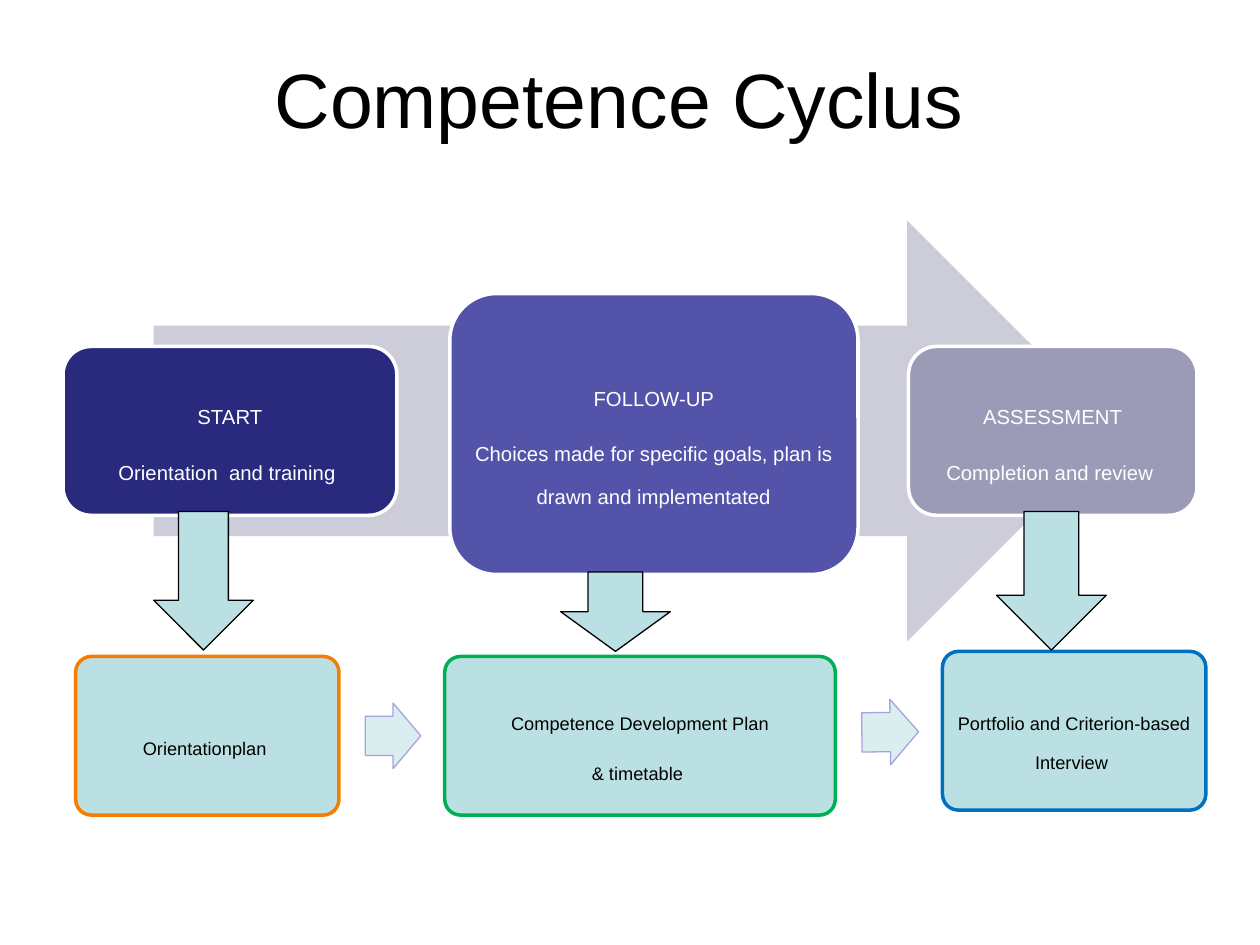
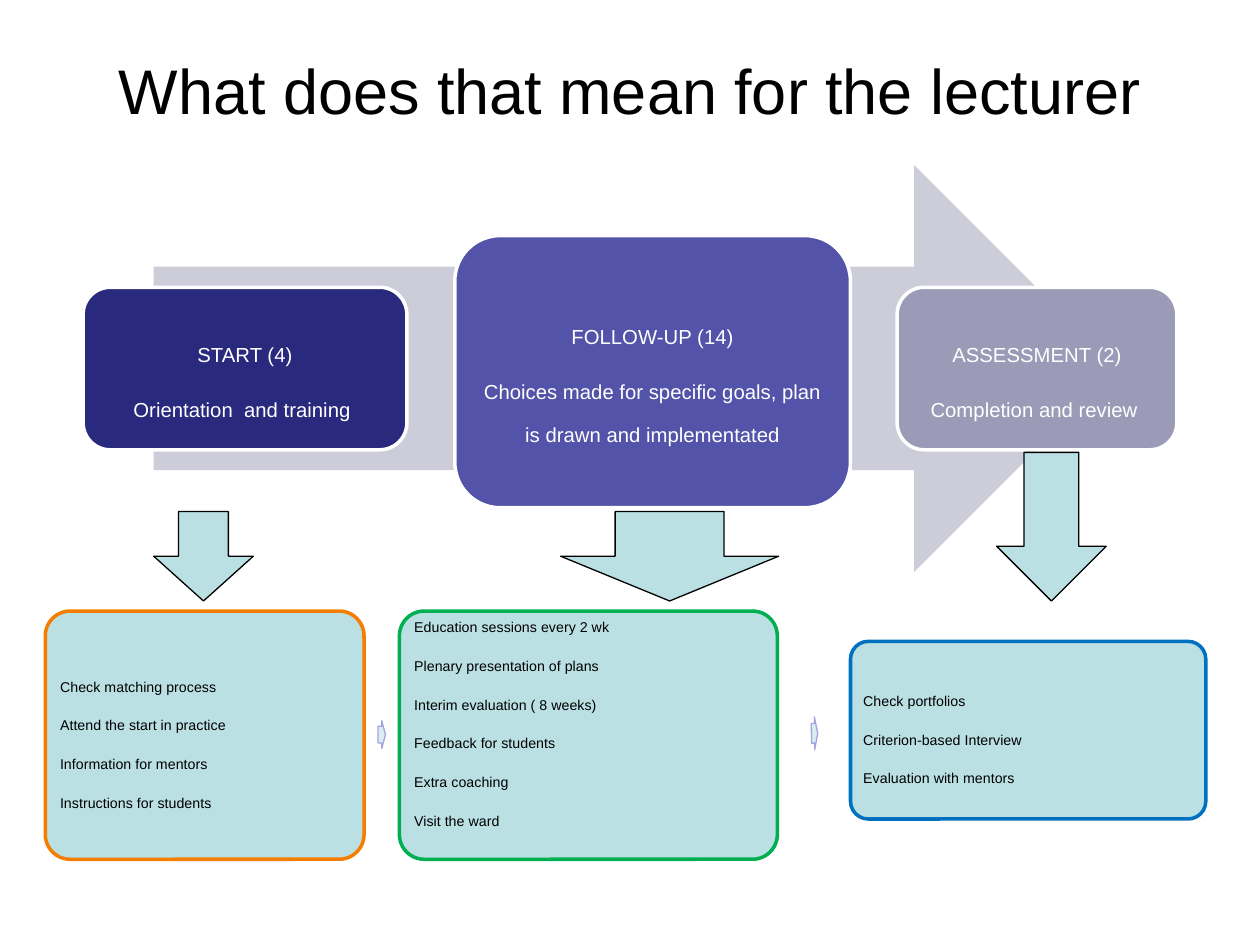
from dataclasses import dataclass
from typing import Optional

import pptx
import pptx.dml.color
import pptx.enum.shapes
import pptx.enum.text
import pptx.oxml.xmlchemy
import pptx.util
from pptx.util import Inches

SHAPE = pptx.enum.shapes.MSO_SHAPE
ALIGN = pptx.enum.text.PP_ALIGN
ANCHOR = pptx.enum.text.MSO_ANCHOR


@dataclass(frozen=True)
class Theme:
    font: str = "Arial"
    black: str = "000000"
    white: str = "FFFFFF"
    band: str = "CDCDDA"
    phases: tuple = ("29297D", "5353A9", "9B9BB8")
    product: str = "BBE0E3"
    outlines: tuple = ("F57E00", "00B050", "0070C0")
    link: str = "DAEDEF"
    link_line: str = "A3A3E0"
    phase_size: int = 20
    thick: float = 2
    thin: float = 0.75


THEME = Theme()


@dataclass(frozen=True)
class Place:
    left: float
    top: float
    width: float
    height: float
    rotation: float = 0


@dataclass(frozen=True)
class TextStyle:
    size: float
    color: str
    inset: float
    align: ALIGN = ALIGN.CENTER


@dataclass(frozen=True)
class Box:
    place: Place
    lines: tuple
    extra_bottom: float = 0


@dataclass(frozen=True)
class CycleSlide:
    title: str
    title_size: int
    band: Place
    phases: tuple
    products: tuple
    product_style: TextStyle
    links: tuple
    down_arrows: tuple


PHASE_STYLE = TextStyle(THEME.phase_size, THEME.white, 0.08)
FOLLOW_UP = "Choices made for specific goals, plan is drawn and implementated"

SLIDES = (
    CycleSlide(
        title="Competence Cyclus ",
        title_size=44,
        band=Place(1.22, 1.75, 7.65, 3.34),
        phases=(
            Box(Place(0.5, 2.75, 2.65, 1.34), ("START", "Orientation  and training ")),
            Box(Place(3.57, 2.33, 3.24, 2.23), ("FOLLOW-UP", FOLLOW_UP)),
            Box(Place(7.21, 2.75, 2.29, 1.34), ("ASSESSMENT", "Completion and review ")),
        ),
        products=(
            Box(Place(0.6, 5.21, 2.09, 1.26), ("Orientationplan ",)),
            Box(Place(3.53, 5.21, 3.1, 1.26), ("Competence Development Plan", "& timetable ")),
            Box(Place(7.48, 5.17, 2.09, 1.26), ("Portfolio and Criterion-based Interview ",)),
        ),
        product_style=TextStyle(18, THEME.black, 0.07),
        links=(Place(2.9, 5.58, 0.44, 0.52), Place(6.84, 5.55, 0.45, 0.52, 359.3)),
        down_arrows=(
            Place(1.22, 4.06, 0.79, 1.1),
            Place(4.45, 4.54, 0.87, 0.63),
            Place(7.91, 4.06, 0.87, 1.1),
        ),
    ),
    CycleSlide(
        title="What does that mean for the lecturer",
        title_size=36,
        band=Place(1.22, 1.31, 7.65, 3.23),
        phases=(
            Box(Place(0.66, 2.28, 2.57, 1.29), ("START (4)", "Orientation  and training ")),
            Box(Place(3.61, 1.87, 3.14, 2.16), ("FOLLOW-UP (14)", FOLLOW_UP)),
            Box(Place(7.12, 2.28, 2.22, 1.29), ("ASSESSMENT (2)", "Completion and review ")),
        ),
        products=(
            Box(Place(0.36, 4.85, 2.53, 1.97), (
                "Check matching process",
                "Attend the start in practice",
                "Information for mentors",
                "Instructions for students",
            )),
            Box(Place(3.17, 4.85, 3, 1.97), (
                "Education sessions every 2 wk",
                "Plenary presentation of plans",
                "Interim evaluation ( 8 weeks)",
                "Feedback for students",
                "Extra coaching",
                "Visit the ward",
            ), extra_bottom=0.33),
            Box(Place(6.75, 5.09, 2.82, 1.41), (
                "Check portfolios",
                "Criterion-based Interview",
                "Evaluation with mentors",
            )),
        ),
        product_style=TextStyle(14, THEME.black, 0.06, ALIGN.LEFT),
        links=(Place(3, 5.72, 0.06, 0.22), Place(6.44, 5.69, 0.05, 0.26, 359.4)),
        down_arrows=(
            Place(1.22, 4.06, 0.79, 0.71),
            Place(4.45, 4.06, 1.73, 0.71),
            Place(7.91, 3.59, 0.87, 1.18),
        ),
    ),
)


def rgb(color: str) -> pptx.dml.color.RGBColor:
    return pptx.dml.color.RGBColor.from_string(color)


def apply(target, formats: dict) -> None:
    for name, value in formats.items():
        setattr(target, name, value)


def set_font(font, size: float, color: str) -> None:
    apply(font, {"name": THEME.font, "size": pptx.util.Pt(size)})
    font.color.rgb = rgb(color)


def add_shape(s, kind: SHAPE, place: Place, fill: str, line: Optional[str] = None,
              line_width: float = THEME.thin, adjustments: tuple = ()):
    sp = s.shapes.add_shape(kind, Inches(place.left), Inches(place.top),
                            Inches(place.width), Inches(place.height))
    sp.shadow.inherit = False
    sp.rotation = place.rotation
    for i, value in enumerate(adjustments):
        sp.adjustments[i] = value
    sp.fill.solid()
    sp.fill.fore_color.rgb = rgb(fill)
    if line:
        sp.line.color.rgb = rgb(line)
        sp.line.width = pptx.util.Pt(line_width)
    else:
        sp.line.fill.background()
    return sp


def set_space_after(p, percent: int) -> None:
    spacing = pptx.oxml.xmlchemy.OxmlElement("a:spcAft")
    share = pptx.oxml.xmlchemy.OxmlElement("a:spcPct")
    share.set("val", str(percent * 1000))
    spacing.append(share)
    p._p.get_or_add_pPr().append(spacing)


def write_lines(sp, box: Box, style: TextStyle) -> None:
    tf = sp.text_frame
    inset = Inches(style.inset)
    apply(tf, {
        "word_wrap": True,
        "vertical_anchor": ANCHOR.MIDDLE,
        "margin_left": inset,
        "margin_right": inset,
        "margin_top": inset,
        "margin_bottom": inset + Inches(box.extra_bottom),
    })
    for i, line in enumerate(box.lines):
        p = tf.add_paragraph() if i else tf.paragraphs[0]
        apply(p, {"alignment": style.align, "line_spacing": 0.9})
        set_space_after(p, 35)
        r = p.add_run()
        r.text = line
        set_font(r.font, style.size, style.color)
        r._r.get_or_add_rPr().set("baseline", "-25000")


def write_title(s, text: str, size: int) -> None:
    sp = s.shapes.title
    apply(sp, {"left": Inches(0.5), "top": Inches(0.3),
               "width": Inches(9), "height": Inches(1.25)})
    tf = sp.text_frame
    apply(tf, {"word_wrap": True, "vertical_anchor": ANCHOR.TOP,
               "margin_top": Inches(0.11),
               "auto_size": pptx.enum.text.MSO_AUTO_SIZE.NONE})
    p = tf.paragraphs[0]
    p.alignment = ALIGN.CENTER
    r = p.add_run()
    r.text = text
    set_font(r.font, size, THEME.black)


def build_slide(prs, cycle: CycleSlide) -> None:
    s = prs.slides.add_slide(prs.slide_layouts[5])
    write_title(s, cycle.title, cycle.title_size)
    add_shape(s, SHAPE.RIGHT_ARROW, cycle.band, THEME.band)
    for box, fill in zip(cycle.phases, THEME.phases):
        sp = add_shape(s, SHAPE.ROUNDED_RECTANGLE, box.place, fill, THEME.white, THEME.thick)
        write_lines(sp, box, PHASE_STYLE)
    for box, outline in zip(cycle.products, THEME.outlines):
        sp = add_shape(s, SHAPE.ROUNDED_RECTANGLE, box.place, THEME.product,
                       outline, THEME.thick, (0.1,))
        write_lines(sp, box, cycle.product_style)
    for place in cycle.links:
        add_shape(s, SHAPE.RIGHT_ARROW, place, THEME.link, THEME.link_line,
                  adjustments=(0.6, 0.5))
    for place in cycle.down_arrows:
        add_shape(s, SHAPE.DOWN_ARROW, place, THEME.product, THEME.black,
                  adjustments=(0.5, 0.5))


def main() -> None:
    prs = pptx.Presentation()
    apply(prs, {"slide_width": Inches(10), "slide_height": Inches(7.5)})
    for cycle in SLIDES:
        build_slide(prs, cycle)
    prs.save("out.pptx")


if __name__ == "__main__":
    main()
